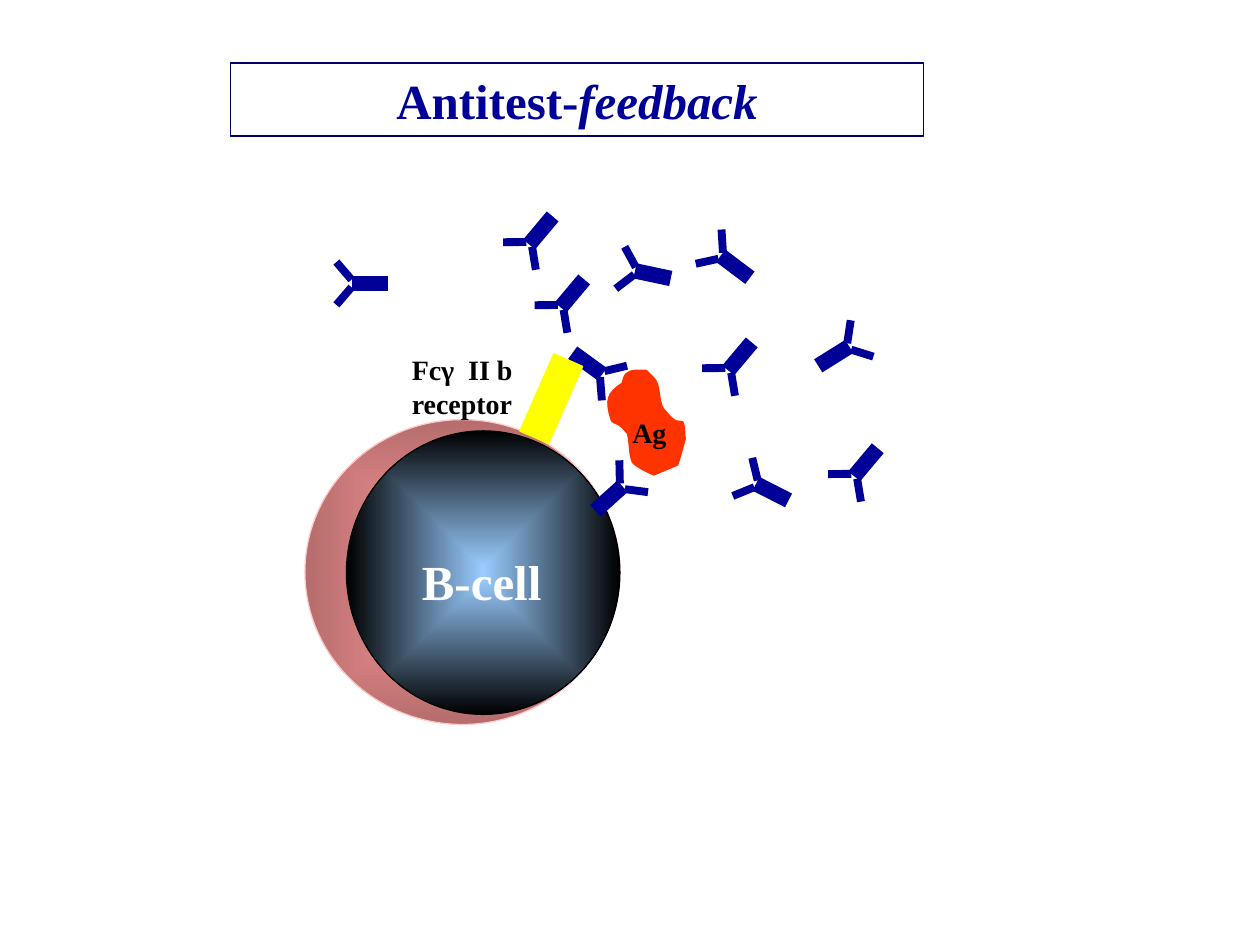
from dataclasses import dataclass
from math import cos, radians, sin

from lxml.etree import SubElement
from pptx import Presentation
from pptx.dml.color import RGBColor as RGB
from pptx.enum.shapes import MSO_CONNECTOR as Link, MSO_SHAPE as Preset
from pptx.enum.text import MSO_AUTO_SIZE as Fit, PP_ALIGN as Align
from pptx.oxml import parse_xml
from pptx.oxml.ns import nsdecls, qn
from pptx.util import Inches, Pt


@dataclass(frozen=True)
class Theme:
    font: str = "Times New Roman"
    heading: int = 28
    label: int = 16
    outline: float = 0.75
    antibody_width: float = 4.5
    navy: str = "000099"
    frame: str = "000066"
    black: str = "000000"
    white: str = "FFFFFF"
    sky: str = "99CCFF"
    rose: str = "FF9999"
    dark_rose: str = "B66D6D"
    pale_rose: str = "FFCCCC"
    yellow: str = "FFFF00"
    red: str = "FF3300"


class Diagram:
    """Draws styled elements on the current slide."""

    def __init__(self, slide, theme):
        self.slide, self.theme = slide, theme

    def outline(self, shape, color):
        shape.shadow.inherit = False
        shape.line.color.rgb = RGB.from_string(color)
        shape.line.width = Pt(self.theme.outline)

    def solid(self, shape, color):
        shape.fill.solid()
        shape.fill.fore_color.rgb = RGB.from_string(color)
        self.outline(shape, color)

    def preset(self, kind, box):
        return self.slide.shapes.add_shape(kind, *map(Inches, box))

    def cell(self, box, center, edge, border):
        disc = self.preset(Preset.OVAL, box)
        disc.fill.gradient()
        for stop, color in zip(disc.fill.gradient_stops, (center, edge)):
            stop.color.rgb = RGB.from_string(color)
        gradient = disc._element.spPr.find(qn("a:gradFill"))
        gradient.replace(gradient.find(qn("a:lin")), parse_xml(
            f'<a:path {nsdecls("a")} path="shape">'
            '<a:fillToRect l="50000" t="50000" r="50000" b="50000"/></a:path>'))
        self.outline(disc, border)

    def receptor(self, box, angle):
        bar = self.preset(Preset.RECTANGLE, box)
        bar.rotation = angle
        self.solid(bar, self.theme.yellow)

    def antigen(self, start, curves, steps=8):
        outline, here = [], start
        for first, second, end in curves:
            for step in range(1, steps + 1):
                t = step / steps
                weights = (1 - t) ** 3, 3 * t * (1 - t) ** 2, 3 * t * t * (1 - t), t ** 3
                outline.append(tuple(
                    Inches(sum(w * v for w, v in zip(weights, values)))
                    for values in zip(here, first, second, end)))
            here = end
        builder = self.slide.shapes.build_freeform(*map(Inches, start))
        builder.add_line_segments(outline, close=True)
        self.solid(builder.convert_to_shape(), self.theme.red)

    def antibody(self, x, y, angle):
        turn_x, turn_y = cos(radians(angle)), sin(radians(angle))

        def place(along, across):
            return (Inches(x + along * turn_x - across * turn_y),
                    Inches(y + along * turn_y + across * turn_x))

        group = self.slide.shapes.add_group_shape()
        for side in (1, -1):
            tip, hinge, tail = (place(along, side * across) for along, across in
                                ((-0.12, 0.17), (0, 0.03), (0.29, 0.03)))
            for begin, end in ((tip, hinge), (hinge, tail)):
                chain = group.shapes.add_connector(Link.STRAIGHT, *begin, *end)
                chain.line.color.rgb = RGB.from_string(self.theme.navy)
                chain.line.width = Pt(self.theme.antibody_width)
                SubElement(chain._element.spPr, qn("a:effectLst"))

    def add_wording(self, shape, runs, size, color, align=Align.LEFT):
        frame = shape.text_frame
        frame.word_wrap, frame.auto_size = True, Fit.SHAPE_TO_FIT_TEXT
        paragraph = frame.paragraphs[0]
        paragraph.alignment = align
        for wording, italic in runs:
            run = paragraph.add_run()
            run.text = wording
            formats = {"name": self.theme.font, "size": Pt(size), "bold": True, "italic": italic}
            for name, value in formats.items():
                setattr(run.font, name, value)
            run.font.color.rgb = RGB.from_string(color)

    def label(self, box, wording, size, color):
        caption = self.slide.shapes.add_textbox(*map(Inches, box))
        self.add_wording(caption, [(wording, False)], size, color)

    def title(self, box, runs):
        banner = self.preset(Preset.RECTANGLE, box)
        banner.fill.background()
        self.outline(banner, self.theme.frame)
        self.add_wording(banner, runs, self.theme.heading, self.theme.navy, Align.CENTER)


ANTIBODIES = [
    (5.04, 2.15, 12), (4.2, 1.94, -50), (4.94, 3.86, 138), (4.78, 2.97, 216),
    (2.79, 2.25, 0), (6.78, 3.78, -50), (4.45, 2.44, -50), (5.72, 2.03, 37),
    (5.78, 2.94, -50), (6.74, 2.75, 148), (6, 3.84, 27),
]
ANTIGEN_START = (4.94, 3.04)
ANTIGEN_CURVES = [
    ((4.82, 3.12), (4.8, 3.17), (4.85, 3.33)),
    ((4.86, 3.36), (4.9, 3.36), (4.92, 3.38)),
    ((4.94, 3.39), (4.96, 3.42), (4.98, 3.44)),
    ((5, 3.51), (4.99, 3.6), (5.02, 3.67)),
    ((5.04, 3.7), (5.16, 3.76), (5.19, 3.77)),
    ((5.19, 3.77), (5.36, 3.7), (5.38, 3.69)),
    ((5.39, 3.66), (5.43, 3.52), (5.44, 3.48)),
    ((5.43, 3.44), (5.44, 3.39), (5.42, 3.35)),
    ((5.41, 3.34), (5.37, 3.35), (5.35, 3.33)),
    ((5.32, 3.31), (5.3, 3.28), (5.27, 3.25)),
    ((5.22, 3.18), (5.25, 3.06), (5.19, 3)),
    ((5.17, 2.98), (5.15, 2.96), (5.13, 2.94)),
    ((5.08, 2.94), (5.02, 2.93), (4.98, 2.96)),
    ((4.95, 2.97), (4.94, 3.04), ANTIGEN_START),
]


def main():
    deck = Presentation()
    deck.slide_width, deck.slide_height = Inches(10), Inches(7.5)
    theme = Theme()
    diagram = Diagram(deck.slides.add_slide(deck.slide_layouts[6]), theme)

    diagram.cell((2.42, 3.33, 2.5, 2.42), theme.rose, theme.dark_rose, theme.pale_rose)
    diagram.cell((2.75, 3.42, 2.17, 2.25), theme.sky, theme.black, theme.black)
    for antibody in ANTIBODIES:
        diagram.antibody(*antibody)
    diagram.receptor((4.25, 2.83, 0.25, 0.67), 23.7)
    diagram.antigen(ANTIGEN_START, ANTIGEN_CURVES)

    diagram.label((4.92, 3.25, 0.75, 0.37), "Ag", theme.label, theme.black)
    diagram.label((3.17, 2.75, 1.58, 0.64), "Fcγ  II b  receptor", theme.label, theme.black)
    diagram.title((1.83, 0.5, 5.5, 0.58), [("Antitest-", False), ("feedback", True)])
    diagram.label((3.25, 4.33, 1.42, 0.57), "B-cell", theme.heading, theme.white)
    deck.save("out.pptx")


if __name__ == "__main__":
    main()
